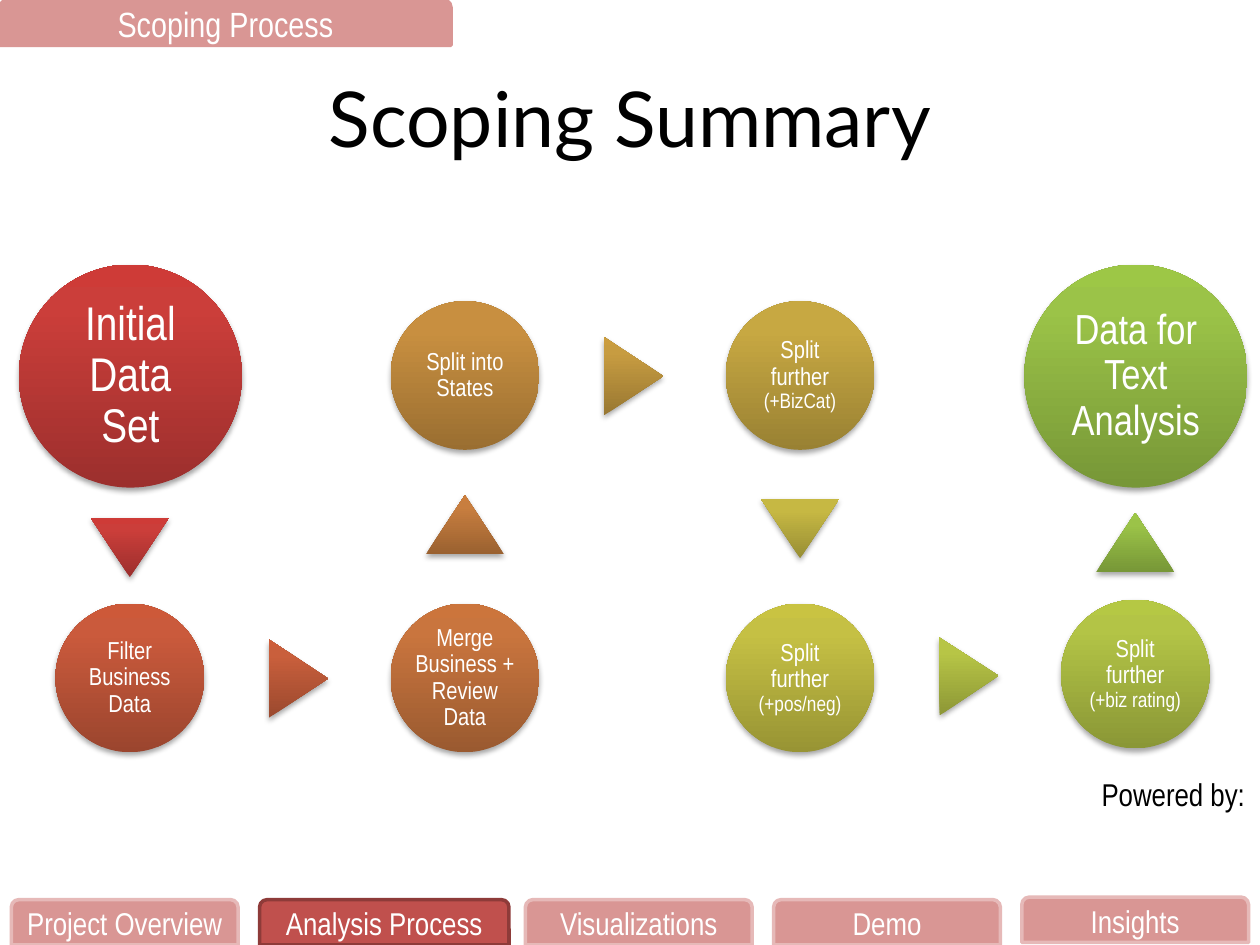
from dataclasses import dataclass

from pptx import Presentation
from pptx.dml.color import RGBColor
from pptx.enum.shapes import MSO_SHAPE as Preset
from pptx.enum.text import MSO_ANCHOR as Anchor, MSO_AUTO_SIZE as AutoSize, PP_ALIGN as Align
from pptx.oxml import parse_xml
from pptx.oxml.ns import nsdecls, qn
from pptx.util import Emu, Pt

EMU_PER_PX = 9144  # 100 px to the inch
NARROW = "Arial Narrow"
WHITE, BLACK = "FFFFFF", "000000"
PINK, PALE_PINK, RED, DARK_RED = "D99694", "E6B9B8", "C0504D", "8E3B39"

# Gradients: colours at 0, 80 and 100 %, from bottom to top
START_RED = ("9C2F2D", "CB3E3A", "CE3B37")
END_GREEN = ("779737", "9BC348", "9DC746")

# Flow grid: centres of the columns, the gaps between them and the rows
COLUMNS = [103 + 266 * i for i in range(4)]
GAPS = [237 + 266 * i for i in range(3)]
TOP_ROW, BOTTOM_ROW = 298, 538
BIG, SMALL = 177, 118
ARROW_W, ARROW_H = 62, 47


@dataclass
class Tab:
    label: str
    left: int
    top: int = 714
    width: int = 180
    fill: str = PINK
    line: str = PALE_PINK
    size: int = 18


@dataclass
class Step:
    label: str
    cx: int
    cy: int
    gradient: tuple[str, str, str]
    detail: str = ""
    diameter: int = SMALL
    size: int = 14
    inset: int = 2


@dataclass
class Arrow:
    cx: int
    cy: int
    rotation: float
    gradient: tuple[str, str, str]


TABS = [
    Tab("Project Overview", 9),
    Tab("Analysis Process", 206, width=198, fill=RED, line=DARK_RED),
    Tab("Visualizations", 417),
    Tab("Demo", 614),
    Tab("Insights", 811, top=712),
    Tab("Scoping Process", 0, top=0, width=358, line=PINK, size=20),
]

STEPS = [
    Step("Initial Data Set", COLUMNS[0], TOP_ROW, START_RED, diameter=BIG, size=27, inset=4),
    Step("Filter Business Data", COLUMNS[0], BOTTOM_ROW, ("9B452E", "CA5A3C", "CD5939")),
    Step("Merge Business + Review Data", COLUMNS[1], BOTTOM_ROW, ("9A5A30", "C9753E", "CC753C")),
    Step("Split into States", COLUMNS[1], TOP_ROW, ("9A6E31", "C88F40", "CB903E")),
    Step("Split further ", COLUMNS[2], TOP_ROW, ("998133", "C7A842", "CAAA40"), "(+BizCat)"),
    Step("Split further ", COLUMNS[2], BOTTOM_ROW, ("989434", "C5C044", "C9C342"), "(+pos/neg)"),
    Step("Split further ", COLUMNS[3], 535, ("8A9736", "B3C446", "B5C844"), "(+biz rating)"),
    Step("Data for Text Analysis", COLUMNS[3], TOP_ROW, END_GREEN, diameter=BIG, size=24, inset=3),
]

ARROWS = [
    Arrow(COLUMNS[0], 434, 180, START_RED),
    Arrow(GAPS[0], BOTTOM_ROW, 90, ("9B492E", "C95F3C", "CD5E3A")),
    Arrow(COLUMNS[1], 416, 0, ("9A6130", "C87E3F", "CC7E3C")),
    Arrow(GAPS[1], TOP_ROW, 90, ("997832", "C79C41", "CB9D3F")),
    Arrow(COLUMNS[2], 419, 180, ("988E34", "C6B843", "C9BB41")),
    Arrow(GAPS[2], 536, 89.4, ("8D9736", "B7C546", "B9C844")),
    Arrow(COLUMNS[3], 430, 0, END_GREEN),
]


def px(length: int) -> Emu:
    return Emu(length * EMU_PER_PX)


def rgb(colour: str) -> RGBColor:
    return RGBColor.from_string(colour)


def style_run(run, size: int, colour: str = WHITE, font: str = NARROW) -> None:
    run.font.size = Pt(size)
    run.font.name = font
    run.font.color.rgb = rgb(colour)


def add_text(slide, text: str, box: tuple[int, int, int, int], size: int, font: str, align, anchor):
    frame = slide.shapes.add_textbox(*map(px, box)).text_frame
    frame.word_wrap = True
    frame.vertical_anchor = anchor
    frame.text = text
    frame.paragraphs[0].alignment = align
    style_run(frame.paragraphs[0].runs[0], size, BLACK, font)
    return frame


def add_centred(slide, preset, cx: int, cy: int, width: int, height: int, gradient):
    """Add a shape around its centre with an upright gradient and a soft shadow."""
    shape = slide.shapes.add_shape(
        preset, px(cx - width // 2), px(cy - height // 2), px(width), px(height))
    shape.line.fill.background()
    shape.fill.gradient()
    shape.fill.gradient_angle = 90
    properties = shape._element.spPr
    grad_fill = properties.find(qn("a:gradFill"))
    grad_fill.set("rotWithShape", "0")
    stops = "".join(
        f'<a:gs pos="{pos}000"><a:srgbClr val="{colour}"/></a:gs>'
        for pos, colour in zip((0, 80, 100), gradient))
    grad_fill.replace(grad_fill.find(qn("a:gsLst")),
                      parse_xml(f'<a:gsLst {nsdecls("a")}>{stops}</a:gsLst>'))
    shape.shadow.inherit = False
    properties.find(qn("a:effectLst")).append(parse_xml(
        f'<a:outerShdw {nsdecls("a")} blurRad="40000" dist="23000" dir="5400000" rotWithShape="0">'
        '<a:srgbClr val="000000"><a:alpha val="35000"/></a:srgbClr></a:outerShdw>'))
    return shape


def add_step(slide, step: Step) -> None:
    circle = add_centred(slide, Preset.OVAL, step.cx, step.cy,
                         step.diameter, step.diameter, step.gradient)
    frame = circle.text_frame
    frame.word_wrap = True
    frame.vertical_anchor = Anchor.MIDDLE
    frame.margin_left = frame.margin_right = px(step.inset)
    frame.margin_top = frame.margin_bottom = px(step.inset)
    frame.text = step.label
    paragraph = frame.paragraphs[0]
    paragraph.alignment = Align.CENTER
    paragraph.line_spacing = 0.9
    style_run(paragraph.runs[0], step.size)
    if step.detail:
        detail = paragraph.add_run()
        detail.text = step.detail
        style_run(detail, 12)


def add_arrow(slide, arrow: Arrow) -> None:
    triangle = add_centred(slide, Preset.ISOSCELES_TRIANGLE, arrow.cx, arrow.cy,
                           ARROW_W, ARROW_H, arrow.gradient)
    triangle.rotation = arrow.rotation


def add_tab(slide, tab: Tab) -> None:
    shape = slide.shapes.add_shape(
        Preset.ROUND_2_SAME_RECTANGLE, px(tab.left), px(tab.top), px(tab.width), px(36))
    shape.shadow.inherit = False
    shape.fill.solid()
    shape.fill.fore_color.rgb = rgb(tab.fill)
    shape.line.color.rgb = rgb(tab.line)
    shape.line.width = Pt(2)
    frame = shape.text_frame
    frame.vertical_anchor = Anchor.MIDDLE
    frame.text = tab.label
    frame.paragraphs[0].alignment = Align.CENTER
    style_run(frame.paragraphs[0].runs[0], tab.size)


def main() -> None:
    deck = Presentation()
    deck.slide_width, deck.slide_height = px(1000), px(750)
    slide = deck.slides.add_slide(deck.slide_layouts[6])

    # Title and credit line
    add_text(slide, "Scoping Summary", (50, 30, 900, 125), 44, "Lato", Align.CENTER, Anchor.MIDDLE)
    credit = add_text(slide, "Powered by:", (768, 610, 230, 25), 18, NARROW, Align.RIGHT, Anchor.TOP)
    credit.auto_size = AutoSize.SHAPE_TO_FIT_TEXT

    # Navigation tabs and section tab
    for tab in TABS:
        add_tab(slide, tab)

    # Process flow
    for step in STEPS:
        add_step(slide, step)
    for arrow in ARROWS:
        add_arrow(slide, arrow)

    deck.save("out.pptx")


if __name__ == "__main__":
    main()
